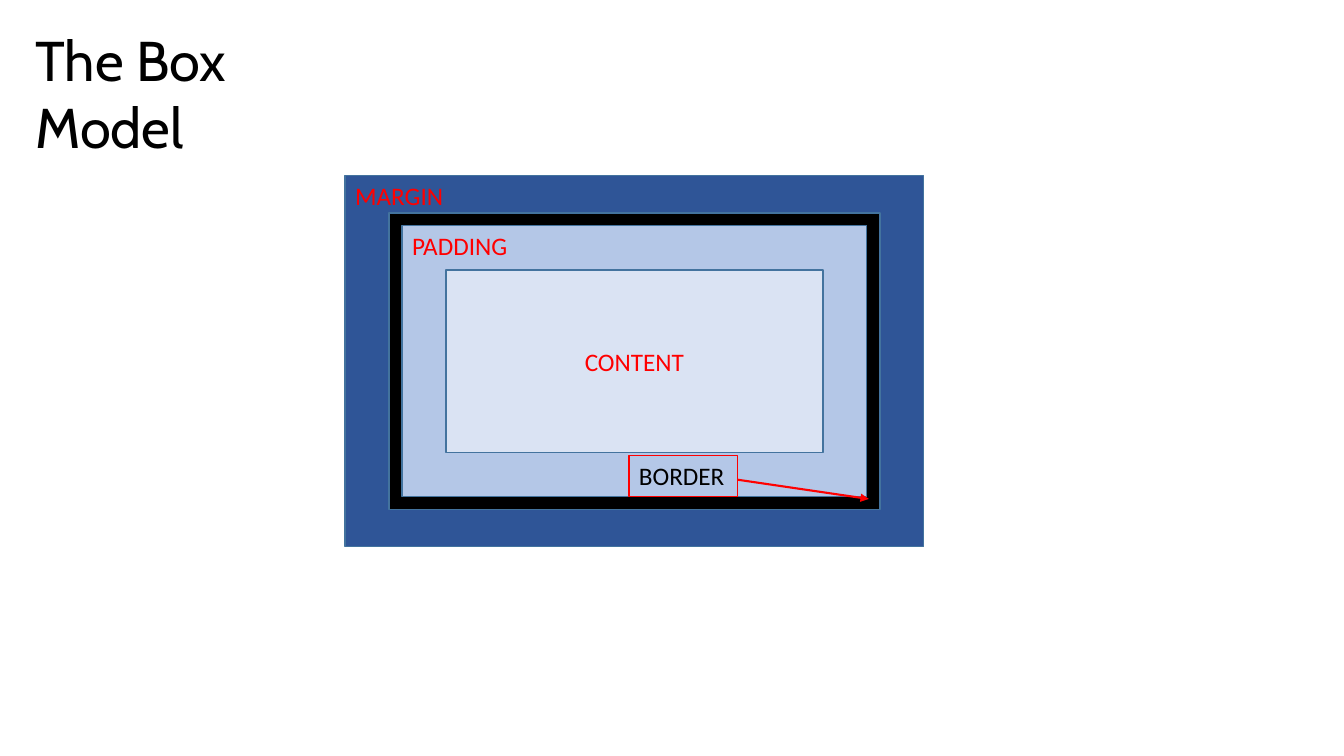
"""Build a slide that shows the CSS box model as nested rectangles."""
import pptx
import pptx.dml.color
import pptx.enum.shapes
import pptx.enum.text
import pptx.oxml
import pptx.oxml.ns
import pptx.util

Pt = pptx.util.Pt
ALIGN = pptx.enum.text.PP_ALIGN
ANCHOR = pptx.enum.text.MSO_ANCHOR
CENTER_X, CENTER_Y = 453.2, 258
RED = "FF0000"
BLACK = "000000"
EDGE = "43739E"
LAYERS = [
    ("MARGIN", 413.3, 265, "2F5597", ALIGN.LEFT, ANCHOR.TOP),
    ("", 350.6, 211.7, BLACK, ALIGN.LEFT, ANCHOR.TOP),
    ("PADDING", 331.9, 193.7, "B4C7E7", ALIGN.LEFT, ANCHOR.TOP),
    ("CONTENT", 269.3, 130.3, "DAE3F3", ALIGN.CENTER, ANCHOR.MIDDLE),
]


def rgb(code):
    return pptx.dml.color.RGBColor.from_string(code)


def set_values(target, values):
    for name, value in values.items():
        setattr(target, name, value)


def write_text(shape, text, size, font, color, align=ALIGN.LEFT, anchor=ANCHOR.TOP):
    frame = shape.text_frame
    set_values(frame, {"word_wrap": True, "vertical_anchor": anchor,
                       "auto_size": pptx.enum.text.MSO_AUTO_SIZE.NONE,
                       "margin_left": Pt(7.2), "margin_right": Pt(7.2),
                       "margin_top": Pt(3.6), "margin_bottom": Pt(3.6)})
    para = frame.paragraphs[0]
    para.alignment = align
    span = para.add_run()
    span.text = text
    set_values(span.font, {"size": Pt(size), "name": font})
    span.font.color.rgb = rgb(color)


def add_title(page, text, left, top, width, height):
    title = page.shapes.title
    set_values(title, {"left": Pt(left), "top": Pt(top),
                       "width": Pt(width), "height": Pt(height)})
    write_text(title, text, 40, "Cabin", BLACK)


def add_box(page, left, top, width, height, fill, edge, edge_width):
    box = page.shapes.add_shape(pptx.enum.shapes.MSO_SHAPE.RECTANGLE,
                                Pt(left), Pt(top), Pt(width), Pt(height))
    box.shadow.inherit = False
    if fill:
        box.fill.solid()
        box.fill.fore_color.rgb = rgb(fill)
    else:
        box.fill.background()
    box.line.color.rgb = rgb(edge)
    box.line.width = Pt(edge_width)
    return box


def add_layer(page, label, width, height, fill, align, anchor):
    box = add_box(page, CENTER_X - width / 2, CENTER_Y - height / 2,
                  width, height, fill, EDGE, 1)
    if label:
        write_text(box, label, 18, "Calibri", RED, align, anchor)


def add_arrow(page, start_x, start_y, end_x, end_y, color):
    arrow = page.shapes.add_connector(pptx.enum.shapes.MSO_CONNECTOR.STRAIGHT,
                                      Pt(start_x), Pt(start_y), Pt(end_x), Pt(end_y))
    arrow.line.color.rgb = rgb(color)
    arrow.line.width = Pt(1.5)
    head = pptx.oxml.parse_xml(
        f'<a:tailEnd {pptx.oxml.ns.nsdecls("a")} type="triangle"/>')
    arrow.line._get_or_add_ln().append(head)
    arrow._element.spPr.append(
        pptx.oxml.parse_xml(f'<a:effectLst {pptx.oxml.ns.nsdecls("a")}/>'))


def main():
    deck = pptx.Presentation()
    set_values(deck, {"slide_width": Pt(960), "slide_height": Pt(540)})
    page = deck.slides.add_slide(deck.slide_layouts[5])
    add_title(page, "The Box Model", 18, 14.4, 254.9, 104)
    for layer in LAYERS:
        add_layer(page, *layer)
    border_label = add_box(page, 449.3, 325.4, 77.8, 29.1, None, RED, 0.75)
    write_text(border_label, "BORDER", 18, "Calibri", BLACK)
    add_arrow(page, 527.1, 342.7, 620.6, 356.4, RED)
    deck.save("out.pptx")


if __name__ == "__main__":
    main()
